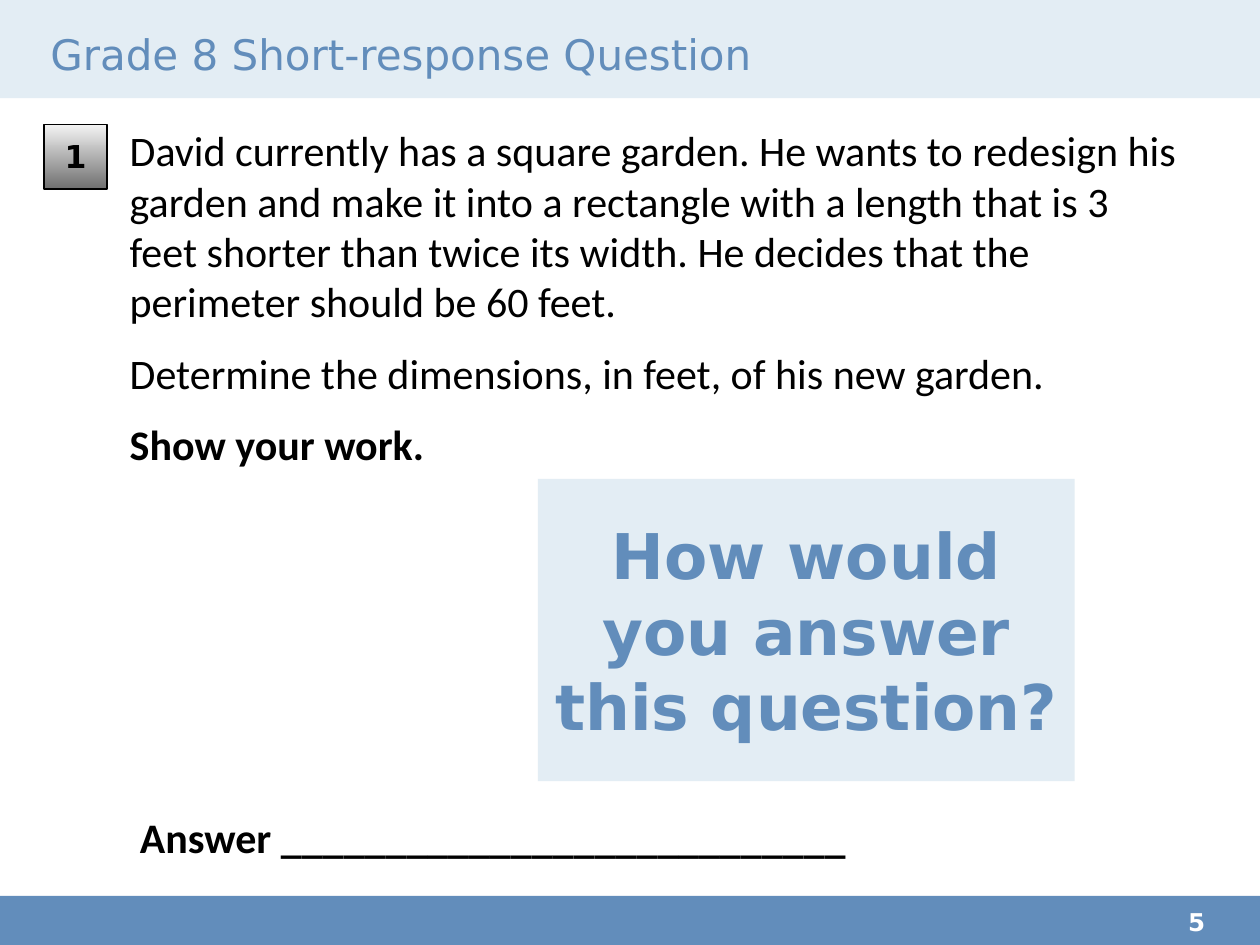
import pptx
import pptx.util
import pptx.dml.color
import pptx.enum.shapes
import pptx.enum.text

Inches = pptx.util.Inches
Pt = pptx.util.Pt
RGBColor = pptx.dml.color.RGBColor
Align = pptx.enum.text.PP_ALIGN
Anchor = pptx.enum.text.MSO_ANCHOR

BLUE = RGBColor(0x62, 0x8D, 0xBB)
PALE = RGBColor(0xE3, 0xED, 0xF4)
BLACK = RGBColor(0, 0, 0)
WHITE = RGBColor(255, 255, 255)
GRAY_LIGHT = RGBColor(0xF2, 0xF2, 0xF2)
GRAY_DARK = RGBColor(0x70, 0x70, 0x70)
HEADING_FONT = "DejaVu Sans"
BODY_FONT = "Calibri"


def add_rectangle(page, box, color):
    shape = page.shapes.add_shape(
        pptx.enum.shapes.MSO_SHAPE.RECTANGLE, *map(Inches, box))
    shape.shadow.inherit = False
    shape.fill.solid()
    shape.fill.fore_color.rgb = color
    shape.line.fill.background()
    return shape


def add_text_box(page, box):
    return page.shapes.add_textbox(*map(Inches, box))


def write(shape, lines, font, size, color, align=Align.LEFT,
          anchor=Anchor.TOP, margins=(0, 0, 0, 0), gap=0):
    """Fill a shape with (text, bold) paragraphs, gap points apart."""
    frame = shape.text_frame
    frame.word_wrap = True
    frame.vertical_anchor = anchor
    (frame.margin_left, frame.margin_top,
     frame.margin_right, frame.margin_bottom) = map(Inches, margins)
    for index, (text, bold) in enumerate(lines):
        para = frame.add_paragraph() if index else frame.paragraphs[0]
        para.text = text
        para.alignment = align
        para.space_before = Pt(gap if index else 0)
        para.font.name = font
        para.font.size = Pt(size)
        para.font.bold = bold
        para.font.color.rgb = color


def add_header(page, box, title):
    left, top, width, height = box
    add_rectangle(page, box, PALE)
    title_box = add_text_box(page, (left + 0.4, top + 0.23, width - 1, 0.49))
    write(title_box, [(title, False)], HEADING_FONT, 24, BLUE,
          margins=(0, 0, 0.1, 0.05))


def add_footer(page, box, number):
    left, top, width, height = box
    add_rectangle(page, box, BLUE)
    number_box = add_text_box(page, (left + width - 0.57, top + 0.09, 0.57, 0.3))
    write(number_box, [(number, True)], HEADING_FONT, 14, WHITE)


def add_question(page, box, number, lines):
    left, top, width, height = box
    # Numbered badge
    badge = add_rectangle(page, (left, top, 0.5, 0.51), GRAY_LIGHT)
    badge.fill.gradient()
    badge.fill.gradient_angle = 270
    for stop, color, position in zip(badge.fill.gradient_stops,
                                     (GRAY_LIGHT, GRAY_DARK), (0, 1)):
        stop.color.rgb = color
        stop.position = position
    badge.line.color.rgb = BLACK
    badge.line.width = Pt(0.75)
    write(badge, [(number, True)], HEADING_FONT, 18, BLACK, Align.CENTER,
          margins=(0.1, 0.1, 0.1, 0.05))
    # Question text
    text_box = add_text_box(page, (left + 0.68, top, width - 0.68, height))
    write(text_box, lines, BODY_FONT, 24, BLACK,
          margins=(0, 0, 0.1, 0.05), gap=12)


def add_callout(page, box, text):
    callout = add_rectangle(page, box, PALE)
    write(callout, [(text, True)], HEADING_FONT, 36, BLUE,
          Align.CENTER, Anchor.MIDDLE)


def add_answer_line(page, box):
    write(add_text_box(page, box), [("Answer " + "_" * 27, True)],
          BODY_FONT, 24, BLACK)


def main():
    deck = pptx.Presentation()
    deck.slide_width = Inches(10)
    deck.slide_height = Inches(7.5)
    page = deck.slides.add_slide(deck.slide_layouts[6])

    add_header(page, (0, 0, 10, 0.78), "Grade 8 Short-response Question")
    add_footer(page, (0, 7.11, 10, 0.39), "5")
    add_question(page, (0.35, 0.99, 9.15, 2.8), "1", [
        ("David currently has a square garden. He wants to redesign his "
         "garden and make it into a rectangle with a length that is 3 feet "
         "shorter than twice its width. He decides that the perimeter "
         "should be 60 feet.", False),
        ("Determine the dimensions, in feet, of his new garden.", False),
        ("Show your work.", True),
    ])
    add_callout(page, (4.27, 3.8, 4.26, 2.4),
                "How would you answer this question?")
    add_answer_line(page, (1.11, 6.44, 8.39, 0.45))
    deck.save("out.pptx")


if __name__ == "__main__":
    main()
